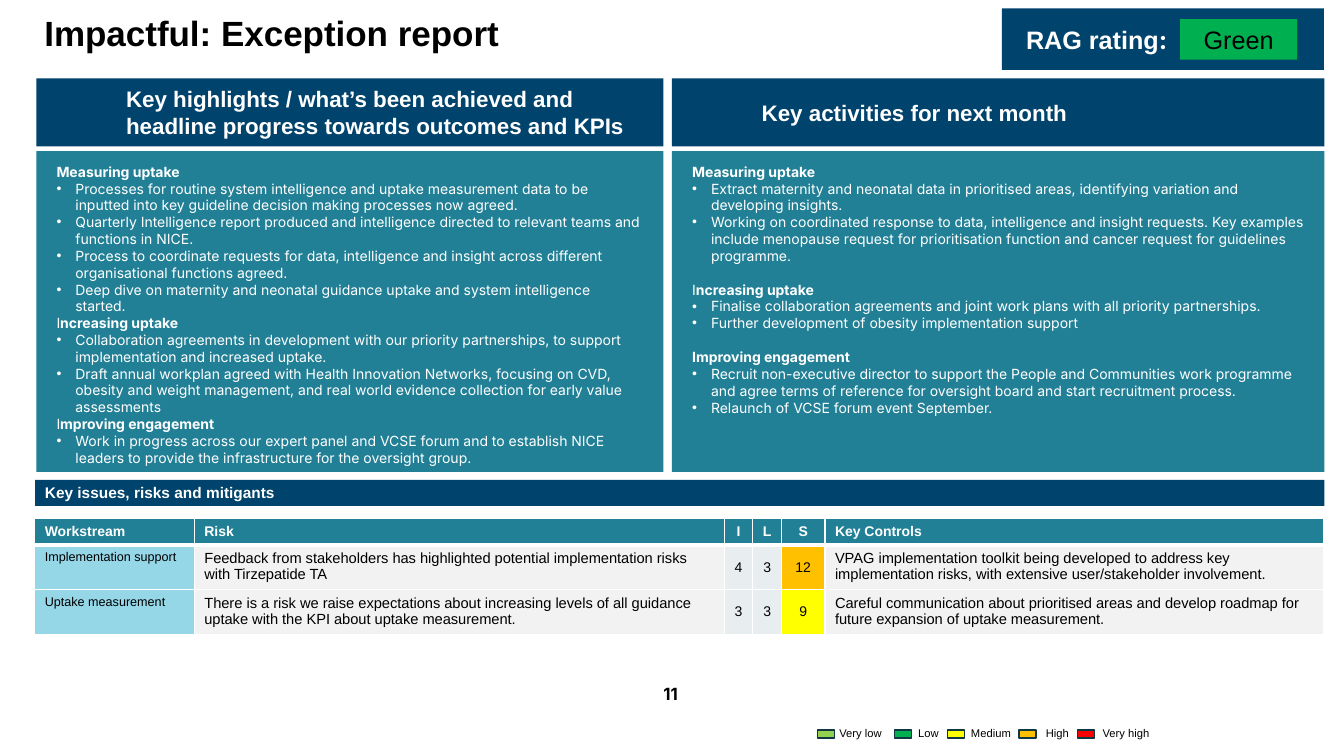
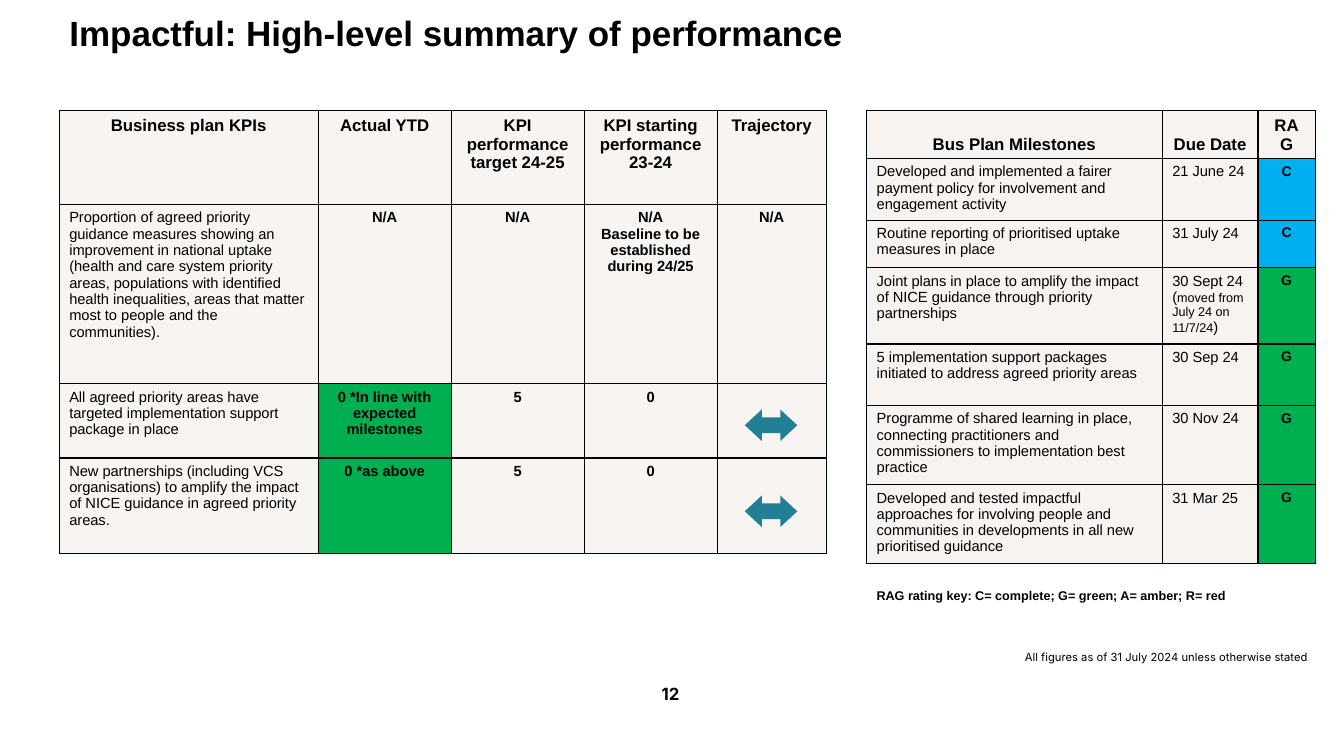
from dataclasses import dataclass, field
from typing import Any, NamedTuple, Sequence

from lxml import etree
from pptx import Presentation
from pptx import util as u
from pptx.dml.color import RGBColor
from pptx.enum import shapes, text
from pptx.oxml import ns

COLOURS = {
    "navy": "00436C", "teal": "228096", "pale blue": "95D7E7", "pale grey": "F2F2F2",
    "score": "E8EDEF", "cream": "F7F4F1", "warm": "F7F3F1", "black": "000000",
    "white": "FFFFFF", "outline": "0F3842", "lime": "92D050", "green": "00B050",
    "yellow": "FFFF00", "amber": "FFC000", "red": "FF0000", "sky": "00B0F0",
}
LEFT, CENTRE = text.PP_ALIGN.LEFT, text.PP_ALIGN.CENTER
TOP, MIDDLE, BOTTOM = (text.MSO_ANCHOR.TOP, text.MSO_ANCHOR.MIDDLE, text.MSO_ANCHOR.BOTTOM)
RECTANGLE = shapes.MSO_SHAPE.RECTANGLE
ARROW = shapes.MSO_SHAPE.LEFT_RIGHT_ARROW
BULLET_INDENT = 13.5
PANEL_LINE = 12.1


class Box(NamedTuple):
    left: float
    top: float
    width: float
    height: float


@dataclass(frozen=True)
class Style:
    size: float
    bold: bool = False
    colour: str = "black"
    name: str = "Arial"
    align: Any = LEFT
    anchor: Any = TOP
    indent: float = 0
    insets: tuple = (7.2, 3.6, 7.2, 3.6)
    line_spacing: float = 1.0


@dataclass(frozen=True)
class Run:
    text: str
    changes: dict = field(default_factory=dict)


@dataclass(frozen=True)
class Paragraph:
    runs: Sequence[Run]
    bullet: bool = False
    space_before: float = 0


@dataclass(frozen=True)
class Cell:
    content: Any
    style: Style
    fill: str


class LegendKey(NamedTuple):
    label: str
    fill: str
    swatch_left: float
    label_left: float


TITLE = Style(25, bold=True, line_spacing=0.9)
PAGE_NUMBER = Style(12, bold=True, name="Inter", align=CENTRE)
PANEL_TITLE = Style(16, bold=True, colour="white", anchor=MIDDLE, indent=57)
PANEL_BODY = Style(10, colour="white", name="Inter", insets=(14.4, 8.6, 14.4, 14.4))
BAND = Style(11, bold=True, colour="white", anchor=MIDDLE)
RATING = Style(18, bold=True, colour="white", anchor=MIDDLE, insets=(17.2, 3.6, 7.2, 3.6))
RATING_VALUE = Style(18, align=CENTRE, anchor=MIDDLE)
LEGEND = Style(8)
RISK_HEAD = Style(10, bold=True, colour="white")
SCORE_HEAD = Style(10, bold=True, colour="white", align=CENTRE)
WORKSTREAM = Style(9)
BODY = Style(10.5)
SCORE = Style(10, align=CENTRE, anchor=MIDDLE)
KPI_HEAD = Style(12, bold=True, align=CENTRE)
KPI_VALUE = Style(10.5, bold=True, align=CENTRE)
MILESTONE_HEAD = Style(12, bold=True, align=CENTRE, anchor=BOTTOM)
RAG = Style(10, bold=True, align=CENTRE)


def rgb(colour: str) -> RGBColor:
    return RGBColor.from_string(COLOURS[colour])


def heading(words: str, thin: str = "", space_before: float = 0) -> Paragraph:
    """Bold panel heading, whose first letters may stay regular."""
    runs = [Run(thin)] if thin else []
    return Paragraph(runs + [Run(words, {"bold": True})], space_before=space_before)


def bullets(*items: str) -> list[Paragraph]:
    return [Paragraph([Run(item)], bullet=True) for item in items]


def add_bullet(paragraph: Any) -> None:
    properties = paragraph._p.get_or_add_pPr()
    properties.set("marL", str(u.Pt(BULLET_INDENT)))
    properties.set("indent", str(-u.Pt(BULLET_INDENT)))
    etree.SubElement(properties, ns.qn("a:buFont"), typeface="Arial")
    etree.SubElement(properties, ns.qn("a:buChar"), char="•")


def write(frame: Any, content: Any, style: Style) -> None:
    """Fill a text frame with a string (one paragraph a line) or paragraphs."""
    if isinstance(content, str):
        content = [Paragraph([Run(line)]) for line in content.split("\n")]
    for number, source in enumerate(content):
        paragraph = frame.paragraphs[0] if number == 0 else frame.add_paragraph()
        paragraph.alignment = style.align
        paragraph.line_spacing = style.line_spacing
        paragraph.space_before = u.Pt(source.space_before)
        if source.bullet:
            add_bullet(paragraph)
        elif style.indent:
            paragraph._p.get_or_add_pPr().set("marL", str(u.Pt(style.indent)))
        for part in source.runs:
            run = paragraph.add_run()
            run.text = part.text
            values = {"size": style.size, "bold": style.bold, "name": style.name}
            values.update(part.changes)
            values["size"] = u.Pt(values["size"])
            for name, value in values.items():
                setattr(run.font, name, value)
            run.font.color.rgb = rgb(style.colour)


def set_up_frame(frame: Any, style: Style) -> None:
    left, top, right, bottom = (u.Pt(inset) for inset in style.insets)
    values = {
        "word_wrap": True, "auto_size": text.MSO_AUTO_SIZE.NONE, "vertical_anchor": style.anchor,
        "margin_left": left, "margin_top": top, "margin_right": right, "margin_bottom": bottom,
    }
    for name, value in values.items():
        setattr(frame, name, value)


def add_text(parent: Any, box: Box, content: Any, style: Style) -> None:
    frame = parent.add_textbox(*map(u.Pt, box)).text_frame
    set_up_frame(frame, style)
    write(frame, content, style)


def add_block(parent: Any, box: Box, fill: str, content: Any = None, style: Style = BODY,
              kind: Any = RECTANGLE, outline: str = "") -> Any:
    shape = parent.add_shape(kind, *map(u.Pt, box))
    shape.shadow.inherit = False
    shape.fill.solid()
    shape.fill.fore_color.rgb = rgb(fill)
    if outline:
        shape.line.color.rgb = rgb(outline)
        shape.line.width = u.Pt(1)
    else:
        shape.line.fill.background()
    if content:
        set_up_frame(shape.text_frame, style)
        write(shape.text_frame, content, style)
    return shape


def add_borders(cell: Any, colour: str, widths: dict[str, float]) -> None:
    properties = cell._tc.get_or_add_tcPr()
    for position, (side, width) in enumerate(widths.items()):
        line = etree.Element(ns.qn(f"a:ln{side}"), w=str(u.Pt(width)))
        fill = etree.SubElement(line, ns.qn("a:solidFill"))
        etree.SubElement(fill, ns.qn("a:srgbClr"), val=COLOURS[colour])
        properties.insert(position, line)


def add_table(slide: Any, left: float, top: float, widths: Sequence[float],
              heights: Sequence[float], rows: Sequence[Sequence[Cell]],
              border: str, head_rule: float = 1) -> None:
    box = Box(left, top, sum(widths), sum(heights))
    table = slide.shapes.add_table(len(rows), len(widths), *map(u.Pt, box)).table
    table.horz_banding = False
    for column, width in zip(table.columns, widths):
        column.width = u.Pt(width)
    for number, (row, height, sources) in enumerate(zip(table.rows, heights, rows)):
        row.height = u.Pt(height)
        above = head_rule if number == 1 else 1
        below = head_rule if number == 0 else 1
        for cell, source in zip(row.cells, sources):
            cell.fill.solid()
            cell.fill.fore_color.rgb = rgb(source.fill)
            cell.vertical_anchor = source.style.anchor
            add_borders(cell, border, {"L": 1, "R": 1, "T": above, "B": below})
            if source.content:
                write(cell.text_frame, source.content, source.style)


def add_slide(presentation: Any, title: str, title_box: Box, page: int) -> Any:
    slide = presentation.slides.add_slide(presentation.slide_layouts[5])
    shape = slide.shapes.title
    shape.left, shape.top, shape.width, shape.height = map(u.Pt, title_box)
    set_up_frame(shape.text_frame, TITLE)
    write(shape.text_frame, title, TITLE)
    add_text(slide.shapes, Box(371, 485, 216, 29), str(page), PAGE_NUMBER)
    return slide


def add_legend(slide: Any) -> None:
    keys = [
        LegendKey("Very low", "lime", 584, 592.5), LegendKey("Low", "green", 638.8, 648.8),
        LegendKey("Medium", "yellow", 677, 686.5), LegendKey("High", "amber", 728, 740),
        LegendKey("Very high", "red", 769.8, 780.5),
    ]
    group = slide.shapes.add_group_shape().shapes
    for key in keys:
        add_block(group, Box(key.swatch_left, 521.3, 12.2, 5.8), key.fill, outline="outline")
        add_text(group, Box(key.label_left, 515.5, 50.4, 17), key.label, LEGEND)


def add_exception_report(presentation: Any) -> None:
    slide = add_slide(presentation, "Impactful: Exception report", Box(24.5, 8, 882, 59), 11)
    add_block(slide.shapes, Box(715.7, 6, 230, 44), "navy",
              [Paragraph([Run("RAG rating"), Run(":", {"name": "Inter"})])], RATING)
    add_block(slide.shapes, Box(843, 13.6, 83.5, 29), "green", "Green", RATING_VALUE)

    achieved = [
        heading("Measuring uptake"),
        *bullets(
            "Processes for routine system intelligence and uptake measurement data to be inputted into key guideline decision making processes now agreed.",
            "Quarterly Intelligence report produced and intelligence directed to relevant teams and functions in NICE.",
            "Process to coordinate requests for data, intelligence and insight across different organisational functions agreed.",
            "Deep dive on maternity and neonatal guidance uptake and system intelligence started."),
        heading("ncreasing uptake", "I"),
        *bullets(
            "Collaboration agreements in development with our priority partnerships, to support implementation and increased uptake.",
            "Draft annual workplan agreed with Health Innovation Networks, focusing on CVD, obesity and weight management, and real world evidence collection for early value assessments"),
        heading("mproving engagement", "I"),
        *bullets("Work in progress across our expert panel and VCSE forum and to establish NICE leaders to provide the infrastructure for the oversight group."),
    ]
    planned = [
        heading("Measuring uptake"),
        *bullets(
            "Extract maternity and neonatal data in prioritised areas, identifying variation and developing insights.",
            "Working on coordinated response to data, intelligence and insight requests. Key examples include menopause request for prioritisation function and cancer request for guidelines programme."),
        heading("ncreasing uptake", "I", PANEL_LINE),
        *bullets(
            "Finalise collaboration agreements and joint work plans with all priority partnerships.",
            "Further development of obesity implementation support"),
        heading("Improving engagement", space_before=PANEL_LINE),
        *bullets(
            "Recruit non-executive director to support the People and Communities work programme and agree terms of reference for oversight board and start recruitment process.",
            "Relaunch of VCSE forum event September."),
    ]
    panels = [
        (26, 448, "Key highlights / what’s been achieved and headline progress towards outcomes and KPIs", achieved),
        (480, 466, "Key activities for next month", planned),
    ]
    for left, width, title, body in panels:
        add_block(slide.shapes, Box(left, 56, width, 48.5), "navy", title, PANEL_TITLE)
        add_block(slide.shapes, Box(left, 108, width, 229), "teal", body, PANEL_BODY)

    add_block(slide.shapes, Box(25, 342.7, 921, 18.7), "navy", "Key issues, risks and mitigants", BAND)
    names = ["Workstream", "Risk", "I", "L", "S", "Key Controls"]
    rows = [[Cell(name, SCORE_HEAD if len(name) == 1 else RISK_HEAD, "teal") for name in names]]
    risks = [
        ("Implementation support", "Feedback from stakeholders has highlighted potential implementation risks with Tirzepatide TA",
         "4", "3", "12", "amber", "VPAG implementation toolkit being developed to address key implementation risks, with extensive user/stakeholder involvement."),
        ("Uptake measurement", "There is a risk we raise expectations about increasing levels of all guidance uptake with the KPI about uptake measurement.",
         "3", "3", "9", "yellow", "Careful communication about prioritised areas and develop roadmap for future expansion of uptake measurement."),
    ]
    for workstream, risk, impact, likelihood, score, level, controls in risks:
        rows.append([
            Cell(workstream, WORKSTREAM, "pale blue"), Cell(risk, BODY, "pale grey"),
            Cell(impact, SCORE, "score"), Cell(likelihood, SCORE, "score"),
            Cell(score, SCORE, level), Cell(controls, BODY, "pale grey")])
    add_table(slide, 24.8, 370.3, [114, 378.5, 20.5, 20.5, 31, 356.5], [19, 32, 32], rows, "white", 3)
    add_legend(slide)


def add_performance_summary(presentation: Any) -> None:
    slide = add_slide(presentation, "Impactful: High-level summary of performance", Box(42.4, 8, 760, 46), 12)
    names = ["Business plan KPIs", "Actual YTD", "KPI performance target 24-25",
             "KPI starting performance 23-24", "Trajectory"]
    rows = [[Cell(name, KPI_HEAD, "cream") for name in names]]
    measures = [
        ("Proportion of agreed priority guidance measures showing an improvement in national uptake (health and care system priority areas, populations with identified health inequalities, areas that matter most to people and the communities).",
         "N/A", "cream", "N/A", "N/A\nBaseline to be established during 24/25", "N/A"),
        ("All agreed priority areas have targeted implementation support package in place",
         "0 *In line with expected milestones", "green", "5", "0", ""),
        ("New partnerships (including VCS organisations) to amplify the impact of NICE guidance in agreed priority areas.",
         "0 *as above", "green", "5", "0", ""),
    ]
    for measure, actual, status, *others in measures:
        rows.append([Cell(measure, BODY, "cream"), Cell(actual, KPI_VALUE, status),
                     *(Cell(value, KPI_VALUE, "cream") for value in others)])
    add_table(slide, 42.3, 79.2, [185, 95, 95, 95, 78], [67, 128, 53, 68], rows, "black")

    rows = [[Cell(name, MILESTONE_HEAD, "warm") for name in ("Bus Plan Milestones", "Due Date", "RAG")]]
    moved = [Paragraph([Run("30 Sept 24 ("), Run("moved from July 24 on 11/7/24", {"size": 9}), Run(")")])]
    milestones = [
        ("Developed and implemented a fairer payment policy for involvement and engagement activity", "21 June 24", "C"),
        ("Routine reporting of prioritised uptake measures in place", "31 July 24", "C"),
        ("Joint plans in place to amplify the impact of NICE guidance through priority partnerships", moved, "G"),
        ("5 implementation support packages initiated to address agreed priority areas", "30 Sep 24", "G"),
        ("Programme of shared learning in place, connecting practitioners and commissioners to implementation best practice", "30 Nov 24", "G"),
        ("Developed and tested impactful approaches for involving people and communities in developments in all new prioritised guidance", "31 Mar 25", "G"),
    ]
    for milestone, due, status in milestones:
        rows.append([Cell(milestone, BODY, "warm"), Cell(due, BODY, "warm"),
                     Cell(status, RAG, {"C": "sky", "G": "green"}[status])])
    add_table(slide, 619, 79.2, [211.2, 68.4, 40.8], [34, 44, 34, 54.5, 44, 56.5, 56.5], rows, "black")

    for top in (292.5, 354):
        arrow = add_block(slide.shapes, Box(532, top, 37.5, 22.5), "teal", kind=ARROW)
        arrow.adjustments[0], arrow.adjustments[1] = 0.5, 0.54
    add_text(slide.shapes, Box(619, 416.2, 303, 18),
             "RAG rating key: C= complete; G= green; A= amber; R= red", Style(9, bold=True))
    add_text(slide.shapes, Box(725, 461, 235, 17),
             "All figures as of 31 July 2024 unless otherwise stated", Style(8, name="Inter"))


def main() -> None:
    presentation = Presentation()
    presentation.slide_width, presentation.slide_height = u.Pt(960), u.Pt(540)
    add_exception_report(presentation)
    add_performance_summary(presentation)
    presentation.save("out.pptx")


if __name__ == "__main__":
    main()
